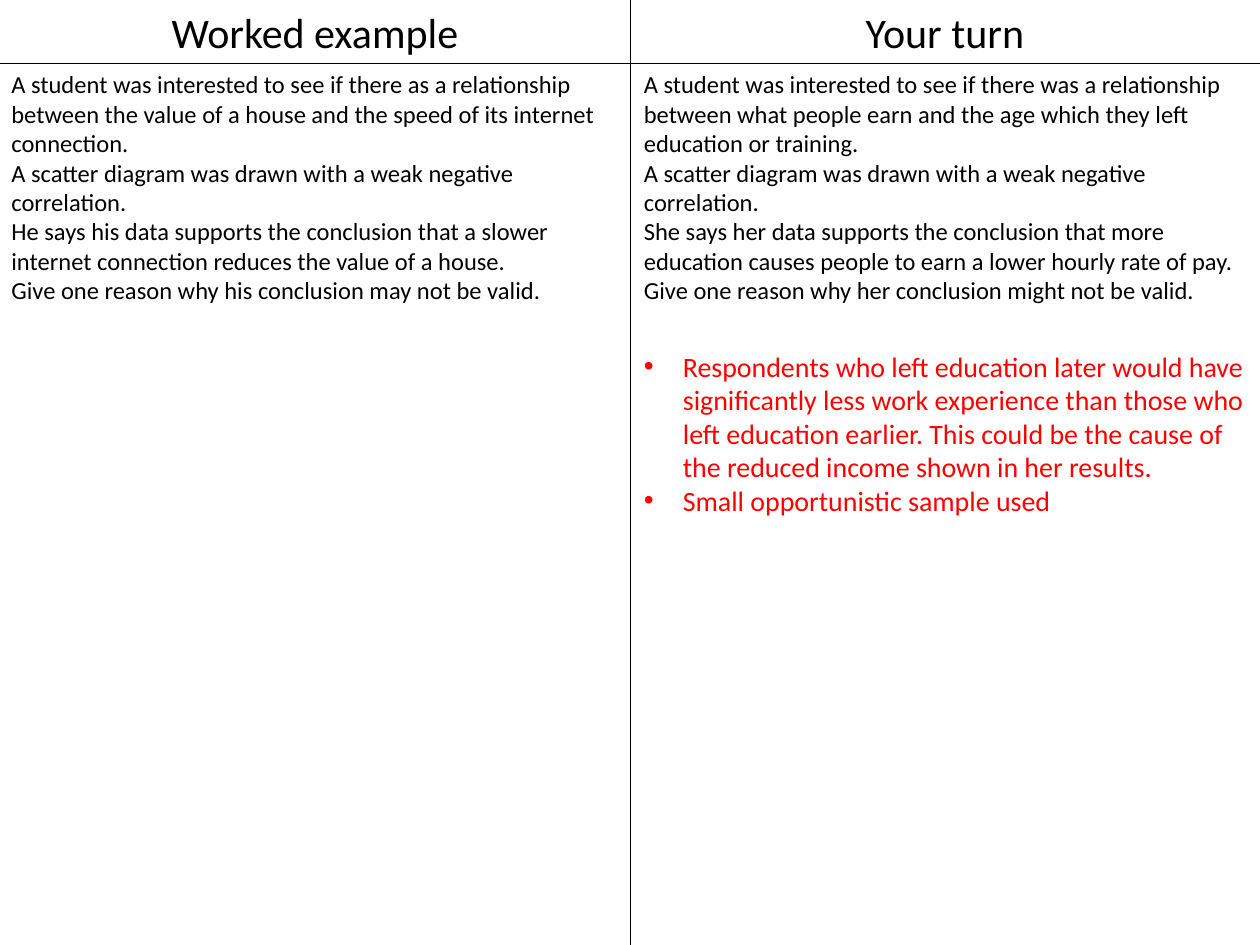
from lxml import etree
from pptx import Presentation
from pptx.dml.color import RGBColor
from pptx.enum.shapes import MSO_CONNECTOR
from pptx.enum.text import MSO_ANCHOR, MSO_AUTO_SIZE, PP_ALIGN
from pptx.oxml.ns import qn
from pptx.util import Inches, Pt

STRAIGHT = MSO_CONNECTOR.STRAIGHT
TOP = MSO_ANCHOR.TOP
NO_FIT = MSO_AUTO_SIZE.NONE
LEFT, CENTER = PP_ALIGN.LEFT, PP_ALIGN.CENTER
BLACK = RGBColor(0, 0, 0)
RED = RGBColor(255, 0, 0)

WIDTH, HEIGHT = 10, 7.5
HALF, HEAD = WIDTH / 2, 0.5
INDENT = 0.31

EXAMPLE = [
    "A student was interested to see if there as a relationship between the value of a house and the speed of its internet connection.",
    "A scatter diagram was drawn with a weak negative correlation.",
    "He says his data supports the conclusion that a slower internet connection reduces the value of a house.",
    "Give one reason why his conclusion may not be valid.",
]
TURN = [
    "A student was interested to see if there was a relationship between what people earn and the age which they left education or training.",
    "A scatter diagram was drawn with a weak negative correlation.",
    "She says her data supports the conclusion that more education causes people to earn a lower hourly rate of pay.",
    "Give one reason why her conclusion might not be valid.",
]
ANSWERS = [
    "Respondents who left education later would have significantly less work experience than those who left education earlier. This could be the cause of the reduced income shown in her results.",
    "Small opportunistic sample used",
]

HEADING = {"size": Pt(24), "color": BLACK, "align": CENTER, "bullet": None}
QUESTION = {"size": Pt(14), "color": BLACK, "align": LEFT, "bullet": None}
ANSWER = {"size": Pt(16), "color": RED, "align": LEFT, "bullet": "•"}

BLOCKS = [
    (0, 0, 0, HEAD, ["Worked example"], HEADING),
    (3, HALF, 0, HEAD, ["Your turn"], HEADING),
    (2, -0.01, HEAD, 1.99, EXAMPLE, QUESTION),
    (4, HALF + 0.01, HEAD, 2.22, TURN, QUESTION),
    (1, HALF + 0.01, 2.72, 1.72, ANSWERS, ANSWER),
]
RULES = [(0, HEAD, WIDTH, HEAD), (HALF, 0, HALF, HEIGHT)]


def set_bullet(p, char):
    pPr = p._p.get_or_add_pPr()
    indent = Inches(INDENT) if char else 0
    pPr.set("marL", str(indent))
    pPr.set("indent", str(-indent))
    if char:
        font = etree.SubElement(pPr, qn("a:buFont"))
        font.set("typeface", "Arial")
        etree.SubElement(pPr, qn("a:buChar")).set("char", char)
    else:
        etree.SubElement(pPr, qn("a:buNone"))


def fill_block(sp, left, top, height, lines, style):
    box = {"left": left, "top": top, "width": HALF, "height": height}
    for name, value in box.items():
        setattr(sp, name, Inches(value))
    tf = sp.text_frame
    frame = {"word_wrap": True, "auto_size": NO_FIT, "vertical_anchor": TOP}
    for name, value in frame.items():
        setattr(tf, name, value)
    spacing = {"alignment": style["align"], "line_spacing": 1.0,
               "space_before": Pt(0), "space_after": Pt(0)}
    face = {"name": "Calibri", "size": style["size"], "bold": False}
    for i, line in enumerate(lines):
        p = tf.paragraphs[0] if i == 0 else tf.add_paragraph()
        set_bullet(p, style["bullet"])
        for name, value in spacing.items():
            setattr(p, name, value)
        r = p.add_run()
        r.text = line
        for name, value in face.items():
            setattr(r.font, name, value)
        r.font.color.rgb = style["color"]


def add_rule(s, ends):
    line = s.shapes.add_connector(STRAIGHT, *map(Inches, ends))
    line.line.color.rgb = BLACK
    line.line.width = Pt(0.5)
    etree.SubElement(line._element.spPr, qn("a:effectLst"))


def main():
    prs = Presentation()
    prs.slide_width, prs.slide_height = Inches(WIDTH), Inches(HEIGHT)
    s = prs.slides.add_slide(prs.slide_layouts.get_by_name("Comparison"))
    for ends in RULES:
        add_rule(s, ends)
    for idx, *block in BLOCKS:
        fill_block(s.placeholders[idx], *block)
    prs.save("out.pptx")


if __name__ == "__main__":
    main()
